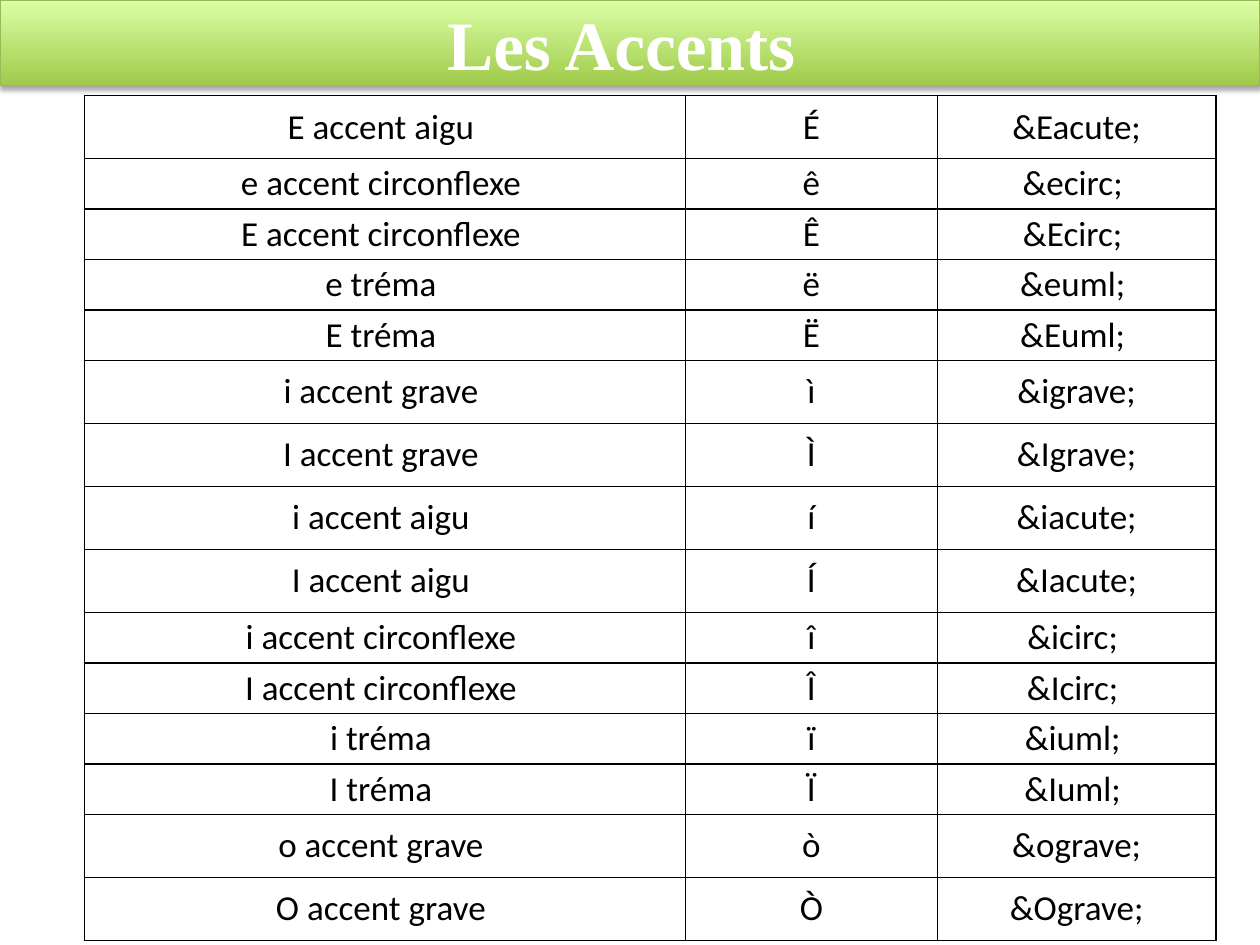
from lxml.etree import SubElement
from pptx import Presentation
from pptx.dml.color import RGBColor
from pptx.enum.shapes import MSO_SHAPE
from pptx.enum.text import MSO_ANCHOR, PP_ALIGN
from pptx.oxml.ns import qn
from pptx.util import Inches, Pt

BLACK = RGBColor(0x00, 0x00, 0x00)
WHITE = RGBColor(0xFF, 0xFF, 0xFF)
GREEN_DARK = RGBColor(0xA0, 0xCA, 0x4A)
GREEN_LIGHT = RGBColor(0xDA, 0xFF, 0xA5)
GREEN_EDGE = RGBColor(0x98, 0xB9, 0x55)

COLUMNS, ROWS = 100, 75
TALL, SHORT = 5, 2.9
ACCENTS = [
    ("E accent aigu", "É", "&Eacute;"),
    ("e accent circonflexe", "ê", "&ecirc;"),
    ("E accent circonflexe", "Ê", "&Ecirc;"),
    ("e tréma", "ë", "&euml;"),
    ("E tréma", "Ë", "&Euml;"),
    ("i accent grave", "ì", "&igrave;"),
    ("I accent grave", "Ì", "&Igrave;"),
    ("i accent aigu", "í", "&iacute;"),
    ("I accent aigu", "Í", "&Iacute;"),
    ("i accent circonflexe", "î", "&icirc;"),
    ("I accent circonflexe", "Î", "&Icirc;"),
    ("i tréma", "ï", "&iuml;"),
    ("I tréma", "Ï", "&Iuml;"),
    ("o accent grave", "ò", "&ograve;"),
    ("O accent grave", "Ò", "&Ograve;"),
]


class SlideBuilder:
    """Draws on one slide; lengths are columns and rows of its grid."""

    title_font, title_size = "Times New Roman", Pt(39.6)
    body_font, body_size = "Calibri", Pt(20)

    def __init__(self, prs):
        self.slide = prs.slides.add_slide(prs.slide_layouts[6])
        self.column = prs.slide_width / COLUMNS
        self.row = prs.slide_height / ROWS

    def x(self, columns):
        return round(columns * self.column)

    def y(self, rows):
        return round(rows * self.row)

    def box(self, left, top, width, height):
        return self.x(left), self.y(top), self.x(width), self.y(height)

    def add_text(self, tf, text, font, size, color, bold=False):
        p = tf.paragraphs[0]
        p.alignment = PP_ALIGN.CENTER
        r = p.add_run()
        r.text = text
        r.font.name, r.font.size, r.font.bold = font, size, bold
        r.font.color.rgb = color

    def banner(self, text, *box):
        sp = self.slide.shapes.add_shape(MSO_SHAPE.RECTANGLE, *self.box(*box))
        sp.fill.gradient()
        sp.fill.gradient_angle = 90
        for stop, color, position in zip(
                sp.fill.gradient_stops, (GREEN_DARK, GREEN_LIGHT), (0, 1)):
            stop.color.rgb = color
            stop.position = position
        sp.line.color.rgb = GREEN_EDGE
        sp.line.width = Pt(0.75)
        self.drop_shadow(sp)
        tf = sp.text_frame
        tf.word_wrap = True
        tf.vertical_anchor = MSO_ANCHOR.MIDDLE
        self.add_text(tf, text, self.title_font, self.title_size, WHITE, bold=True)

    def drop_shadow(self, sp):
        sp.shadow.inherit = False
        effects = sp.element.spPr.find(qn("a:effectLst"))
        shadow = SubElement(effects, qn("a:outerShdw"), blurRad=str(Pt(3.1)),
                            dist=str(Pt(1.8)), dir="5400000", rotWithShape="0")
        color = SubElement(shadow, qn("a:srgbClr"), val=str(BLACK))
        SubElement(color, qn("a:alpha"), val="35000")

    def table(self, records, widths, heights, *box):
        table = self.slide.shapes.add_table(
            len(records), len(widths), *self.box(*box)).table
        table.first_row = table.horz_banding = False
        for column, width in zip(table.columns, widths):
            column.width = self.x(width)
        for row, height, record in zip(table.rows, heights, records):
            row.height = self.y(height)
            for cell, text in zip(row.cells, record):
                self.cell(cell, text)

    def cell(self, cell, text):
        cell.margin_left = cell.margin_right = Inches(0.06)
        cell.margin_top = cell.margin_bottom = Inches(0.03)
        cell.vertical_anchor = MSO_ANCHOR.MIDDLE
        self.add_text(cell.text_frame, text, self.body_font, self.body_size, BLACK)
        self.borders(cell)
        cell.fill.background()

    def borders(self, cell):
        tcPr = cell._tc.get_or_add_tcPr()
        for side in ("lnL", "lnR", "lnT", "lnB"):
            line = SubElement(tcPr, qn(f"a:{side}"), w=str(Pt(1)))
            fill = SubElement(line, qn("a:solidFill"))
            SubElement(fill, qn("a:srgbClr"), val=str(BLACK))


def main():
    prs = Presentation()
    prs.slide_width, prs.slide_height = Inches(10), Inches(7.5)
    s = SlideBuilder(prs)
    s.banner("Les Accents ", 0, 0, 100, 6.8)

    records, heights = [], []
    for name, letter, entity in ACCENTS:
        tall = name.endswith(("aigu", "grave"))
        heights.append(TALL if tall else SHORT)
        records.append((name + " ", letter, entity if tall else entity + " "))
    s.table(records, (47.7, 20, 22.1), heights, 6.7, 7.6, 89.8, 66.2)
    prs.save("out.pptx")


if __name__ == "__main__":
    main()
